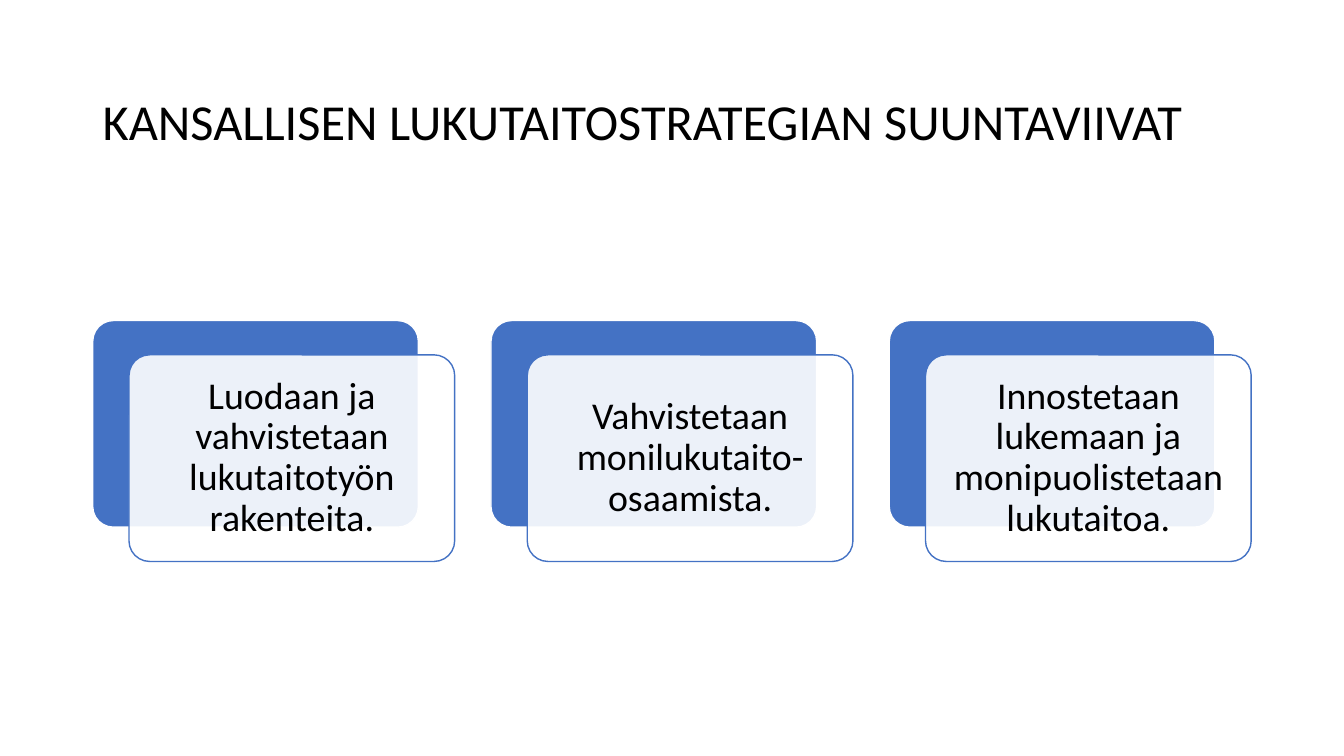
from dataclasses import dataclass

import pptx
import pptx.dml.color
import pptx.enum.shapes
import pptx.enum.text
import pptx.oxml.ns
import pptx.util
from lxml import etree

EMU_PER_PX = 9144  # 100 px to the inch
COLORS = {"text": "000000", "accent": "4472C4", "white": "FFFFFF"}
FONT = "Calibri"

CARD_W, CARD_H = 323, 205
CARDS_X, CARDS_Y = 92, 318
CARD_STEP = 395
FRONT_DX, FRONT_DY = 36, 34
CARD_INSET = 11


@dataclass
class Box:
    x: int
    y: int
    w: int
    h: int


@dataclass
class CardStyle:
    fill: str
    line: str
    opacity: int = 100


BACK = CardStyle("accent", "white")
FRONT = CardStyle("white", "accent", opacity=90)

TITLE = "KANSALLISEN LUKUTAITOSTRATEGIAN SUUNTAVIIVAT"
GUIDELINES = [
    "Luodaan ja vahvistetaan lukutaitotyön rakenteita.",
    "Vahvistetaan monilukutaito-osaamista.",
    "Innostetaan lukemaan ja monipuolistetaan lukutaitoa.",
]


def px(n: int) -> pptx.util.Emu:
    return pptx.util.Emu(n * EMU_PER_PX)


def rgb(name: str) -> pptx.dml.color.RGBColor:
    return pptx.dml.color.RGBColor.from_string(COLORS[name])


def place(box: Box) -> tuple:
    return px(box.x), px(box.y), px(box.w), px(box.h)


def write(sp, text: str, size: int, align) -> None:
    tf = sp.text_frame
    tf.word_wrap = True
    tf.vertical_anchor = pptx.enum.text.MSO_ANCHOR.MIDDLE
    p = tf.paragraphs[0]
    p.alignment = align
    p.line_spacing = 0.9
    r = p.add_run()
    r.text = text
    r.font.size = pptx.util.Pt(size)
    r.font.name = FONT
    r.font.color.rgb = rgb("text")


def add_card(s, box: Box, style: CardStyle):
    sp = s.shapes.add_shape(
        pptx.enum.shapes.MSO_SHAPE.ROUNDED_RECTANGLE, *place(box))
    sp.adjustments[0] = 0.1
    sp.shadow.inherit = False
    sp.fill.solid()
    sp.fill.fore_color.rgb = rgb(style.fill)
    sp.line.color.rgb = rgb(style.line)
    sp.line.width = pptx.util.Pt(1)
    if style.opacity < 100:
        qn = pptx.oxml.ns.qn
        color = sp.fill._xPr.find(qn("a:solidFill")).find(qn("a:srgbClr"))
        etree.SubElement(color, qn("a:alpha"), val=str(style.opacity * 1000))
    return sp


def add_guideline(s, x: int, text: str) -> None:
    add_card(s, Box(x, CARDS_Y, CARD_W, CARD_H), BACK)
    front = Box(x + FRONT_DX, CARDS_Y + FRONT_DY, CARD_W, CARD_H)
    sp = add_card(s, front, FRONT)
    tf = sp.text_frame
    tf.margin_left = tf.margin_right = px(CARD_INSET)
    tf.margin_top = tf.margin_bottom = px(CARD_INSET)
    write(sp, text, 27, pptx.enum.text.PP_ALIGN.CENTER)


def main() -> None:
    prs = pptx.Presentation()
    prs.slide_width, prs.slide_height = px(1333), px(750)
    s = prs.slides.add_slide(prs.slide_layouts[6])

    # Title
    title = s.shapes.add_textbox(*place(Box(92, 61, 1150, 124)))
    write(title, TITLE, 36, pptx.enum.text.PP_ALIGN.LEFT)

    # Guideline cards
    for i, text in enumerate(GUIDELINES):
        add_guideline(s, CARDS_X + i * CARD_STEP, text)

    prs.save("out.pptx")


if __name__ == "__main__":
    main()
